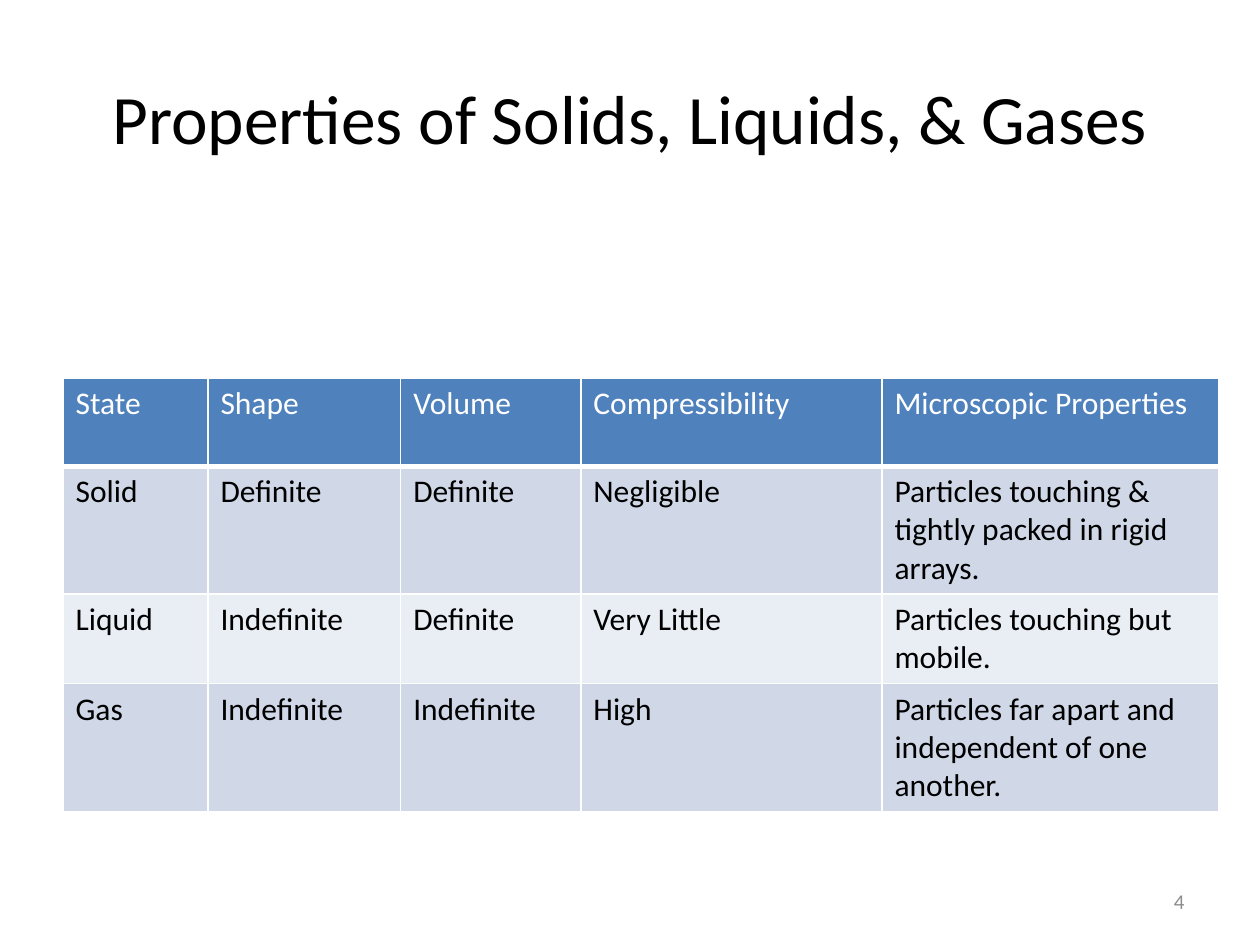
from lxml.etree import SubElement
from pptx import Presentation
from pptx.dml.color import RGBColor
from pptx.enum.text import MSO_ANCHOR, PP_ALIGN
from pptx.oxml.ns import qn
from pptx.util import Inches, Pt

TITLE = "Properties of Solids, Liquids, & Gases"
PAGE_NUMBER = "4"
STATES = [
    ("State", "Shape", "Volume", "Compressibility", "Microscopic Properties"),
    ("Solid", "Definite", "Definite", "Negligible",
     "Particles touching & tightly packed in rigid arrays."),
    ("Liquid", "Indefinite", "Definite", "Very Little",
     "Particles touching but mobile."),
    ("Gas", "Indefinite", "Indefinite", "High",
     "Particles far apart and independent of one another."),
]
COLUMN_WIDTHS = (1.15, 1.53, 1.43, 2.39, 2.67)
ROW_HEIGHTS = (0.7, 1.01, 0.7, 1.01)
MARGIN = 0.5
COLORS = {
    "header": "4F81BD",
    "odd_row": "D0D8E8",
    "even_row": "E9EDF4",
    "white": "FFFFFF",
    "text": "000000",
    "page_number": "8C8C8C",
}


def write(frame, text, size, color, align=PP_ALIGN.LEFT):
    frame.text = text
    paragraph = frame.paragraphs[0]
    paragraph.alignment = align
    font = paragraph.runs[0].font
    font.name = "Calibri"
    font.size = Pt(size)
    font.bold = False
    font.color.rgb = RGBColor.from_string(COLORS[color])


def add_borders(cell, bottom_width):
    properties = cell._tc.get_or_add_tcPr()
    for side, width in (("L", 1), ("R", 1), ("T", 1), ("B", bottom_width)):
        line = SubElement(properties, qn(f"a:ln{side}"), w=str(Pt(width)))
        fill = SubElement(line, qn("a:solidFill"))
        SubElement(fill, qn("a:srgbClr"), val=COLORS["white"])


def add_states_table(slide):
    table = slide.shapes.add_table(
        len(STATES), len(COLUMN_WIDTHS), Inches(MARGIN), Inches(3),
        Inches(sum(COLUMN_WIDTHS)), Inches(sum(ROW_HEIGHTS))).table
    for column, width in zip(table.columns, COLUMN_WIDTHS):
        column.width = Inches(width)
    for index, (row, height, texts) in enumerate(
            zip(table.rows, ROW_HEIGHTS, STATES)):
        row.height = Inches(height)
        is_header = index == 0
        band = "header" if is_header else "odd_row" if index % 2 else "even_row"
        for cell, text in zip(row.cells, texts):
            write(cell.text_frame, text, 18, "white" if is_header else "text")
            add_borders(cell, 3 if is_header else 1)
            cell.fill.solid()
            cell.fill.fore_color.rgb = RGBColor.from_string(COLORS[band])


def main():
    deck = Presentation()
    deck.slide_width, deck.slide_height = Inches(10), Inches(7.5)
    slide = deck.slides.add_slide(deck.slide_layouts[5])

    add_states_table(slide)

    page_number = slide.shapes.add_textbox(
        Inches(7.17), Inches(6.95), Inches(2.33), Inches(0.4)).text_frame
    page_number.word_wrap = True
    page_number.vertical_anchor = MSO_ANCHOR.MIDDLE
    write(page_number, PAGE_NUMBER, 12, "page_number", PP_ALIGN.RIGHT)

    title = slide.shapes.title
    title.left, title.top = Inches(MARGIN), Inches(0.3)
    title.width, title.height = Inches(10 - 2 * MARGIN), Inches(1.25)
    title.text_frame.vertical_anchor = MSO_ANCHOR.MIDDLE
    write(title.text_frame, TITLE, 39.6, "text", PP_ALIGN.CENTER)

    deck.save("out.pptx")


if __name__ == "__main__":
    main()
